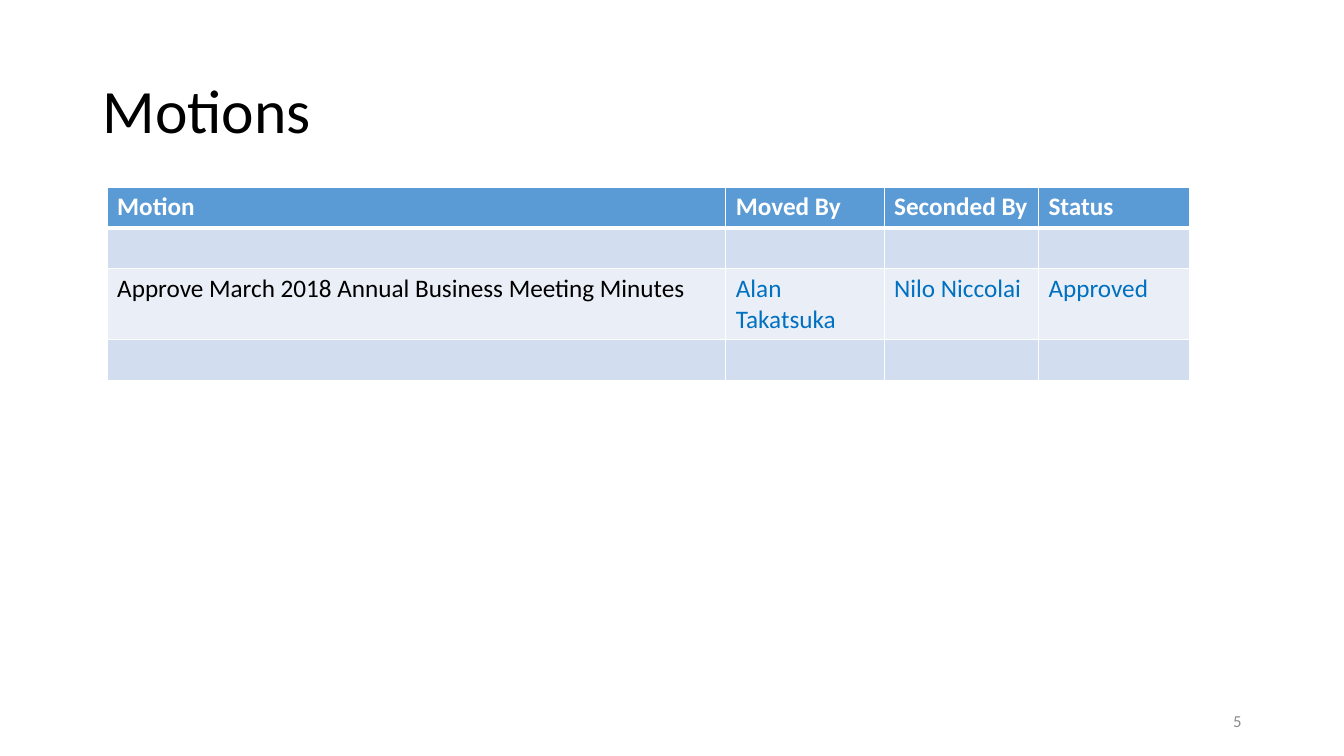
import pptx
import pptx.dml.color
import pptx.enum.text
import pptx.util
import lxml.etree
from pptx.oxml.ns import qn

Cm = pptx.util.Cm
Pt = pptx.util.Pt

HEADINGS = ["Motion", "Moved By", "Seconded By", "Status"]
MOTIONS = [
    [""] * 4,
    ["Approve March 2018 Annual Business Meeting Minutes",
     "Alan Takatsuka", "Nilo Niccolai", "Approved"],
    [""] * 4,
]
COLUMN_WIDTHS = [15.59, 3.99, 3.89, 3.81]
ROW_HEIGHT = 1.03
HEADER_FILL = "5B9BD5"
BAND_FILLS = ["D2DEEF", "EAEFF7"]


def rgb(value):
    return pptx.dml.color.RGBColor.from_string(value)


def add_run(p, text, size, color, bold=False):
    r = p.add_run()
    r.text = text
    r.font.name = "Calibri"
    r.font.size = Pt(size)
    r.font.bold = bold
    r.font.color.rgb = rgb(color)


def set_borders(cell, color, bottom):
    """Draw 1 pt cell borders, with the bottom one in its own width."""
    tcPr = cell._tc.get_or_add_tcPr()
    for side, width in (("L", 1), ("R", 1), ("T", 1), ("B", bottom)):
        ln = lxml.etree.SubElement(tcPr, qn(f"a:ln{side}"), w=str(Pt(width)))
        fill = lxml.etree.SubElement(ln, qn("a:solidFill"))
        lxml.etree.SubElement(fill, qn("a:srgbClr"), val=color)


def add_title(slide, left, top, width, height):
    sp = slide.shapes.title
    sp.left, sp.top, sp.width, sp.height = Cm(left), Cm(top), Cm(width), Cm(height)
    tf = sp.text_frame
    tf.auto_size = pptx.enum.text.MSO_AUTO_SIZE.NONE
    tf.vertical_anchor = pptx.enum.text.MSO_ANCHOR.MIDDLE
    p = tf.paragraphs[0]
    p.alignment = pptx.enum.text.PP_ALIGN.LEFT
    p.line_spacing = 0.9
    add_run(p, "Motions", 44, "000000")


def add_motions_table(slide, left, top):
    rows = [HEADINGS] + MOTIONS
    table = slide.shapes.add_table(
        len(rows), len(HEADINGS), Cm(left), Cm(top),
        Cm(sum(COLUMN_WIDTHS)), Cm(ROW_HEIGHT * len(rows))).table
    for column, width in zip(table.columns, COLUMN_WIDTHS):
        column.width = Cm(width)
    for i, texts in enumerate(rows):
        header = i == 0
        table.rows[i].height = Cm(ROW_HEIGHT)
        for j, text in enumerate(texts):
            cell = table.cell(i, j)
            set_borders(cell, "FFFFFF", 3 if header else 1)
            cell.fill.solid()
            cell.fill.fore_color.rgb = rgb(HEADER_FILL if header else BAND_FILLS[(i - 1) % 2])
            if text:
                color = "FFFFFF" if header else "000000" if j == 0 else "0070C0"
                add_run(cell.text_frame.paragraphs[0], text, 18, color, header)


def add_page_number(slide, left, top, width, height):
    sp = slide.shapes.add_textbox(Cm(left), Cm(top), Cm(width), Cm(height))
    tf = sp.text_frame
    tf.word_wrap = True
    tf.vertical_anchor = pptx.enum.text.MSO_ANCHOR.MIDDLE
    p = tf.paragraphs[0]
    p.alignment = pptx.enum.text.PP_ALIGN.RIGHT
    add_run(p, "5", 12, "8C8C8C")


def main():
    prs = pptx.Presentation()
    prs.slide_width, prs.slide_height = Cm(33.87), Cm(19.05)
    slide = prs.slides.add_slide(prs.slide_layouts[5])
    add_title(slide, 2.33, 1.01, 29.21, 3.68)
    add_page_number(slide, 23.92, 17.66, 7.62, 1.01)
    add_motions_table(slide, 2.7, 4.71)
    prs.save("out.pptx")


if __name__ == "__main__":
    main()
